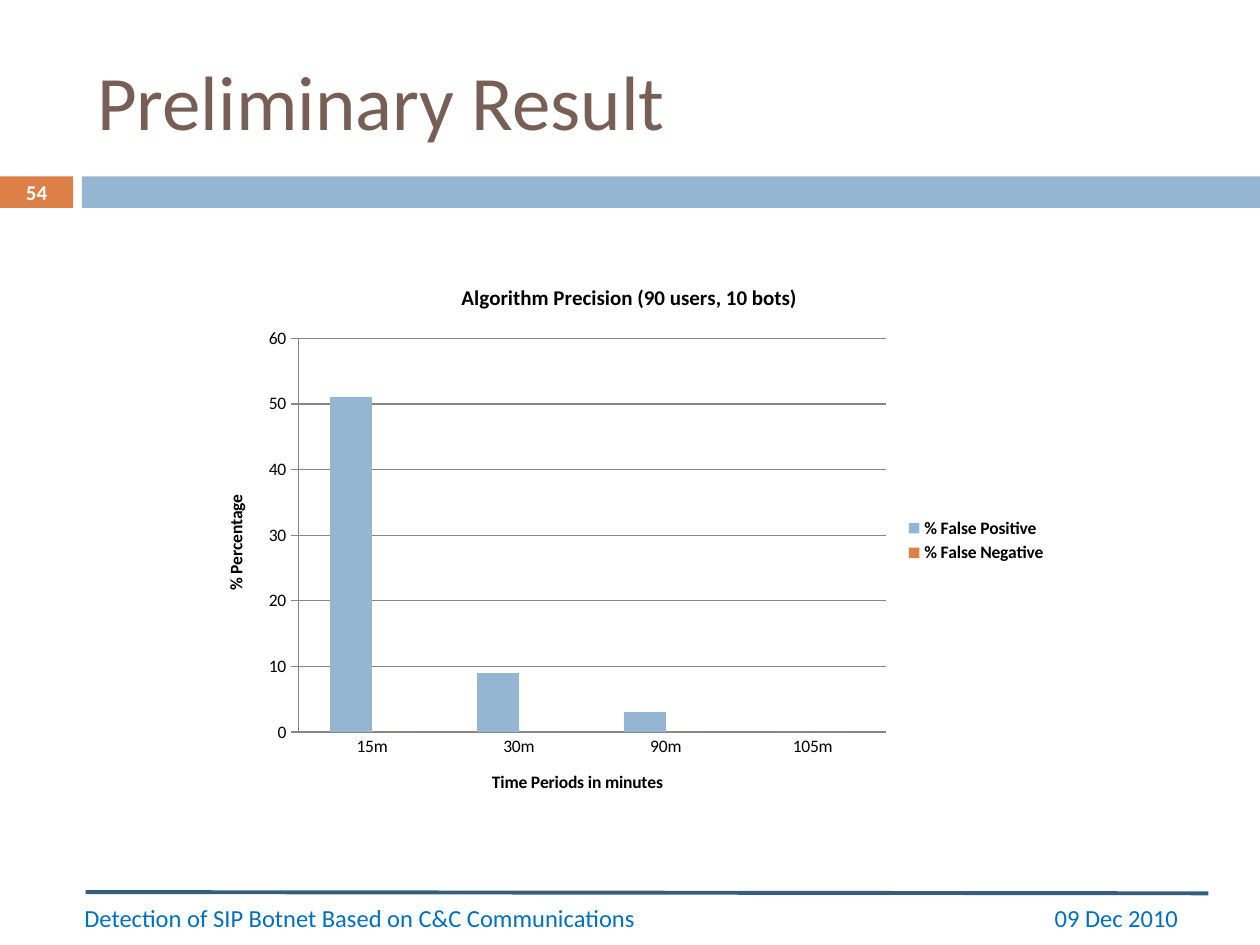
from lxml.etree import SubElement
from pptx import Presentation
from pptx.chart.data import CategoryChartData
from pptx.dml.color import RGBColor
from pptx.enum.chart import XL_CHART_TYPE, XL_LEGEND_POSITION, XL_TICK_MARK
from pptx.enum.shapes import MSO_CONNECTOR, MSO_SHAPE
from pptx.enum.text import MSO_ANCHOR, PP_ALIGN
from pptx.oxml.ns import qn
from pptx.util import Inches, Pt

COLORS = {
    "brown": "775F55", "orange": "DD8047", "blue": "94B6D2", "navy": "355D7E",
    "link": "0070C0", "white": "FFFFFF", "black": "000000", "gray": "878787",
}


def color(name):
    return RGBColor.from_string(COLORS[name])


def style_font(font, size, ink, bold=False):
    font.name, font.size, font.bold = "Calibri", Pt(size), bold
    font.color.rgb = color(ink)


def write(frame, text, size=14, ink="link", bold=False, align=PP_ALIGN.LEFT, left=0.1):
    frame.word_wrap = True
    frame.vertical_anchor = MSO_ANCHOR.MIDDLE
    frame.margin_left, frame.margin_right = Inches(left), Inches(0.1)
    frame.margin_top = frame.margin_bottom = Inches(0.05)
    paragraph = frame.paragraphs[0]
    paragraph.alignment = align
    run = paragraph.add_run()
    run.text = text
    style_font(run.font, size, ink, bold)


class Deck:
    """Holds the presentation style and the current slide."""

    def __init__(self):
        self.presentation = Presentation()
        self.presentation.slide_width = Inches(10)
        self.presentation.slide_height = Inches(7.5)
        self.slide = self.presentation.slides.add_slide(self.presentation.slide_layouts[5])

    def title(self, text, *box):
        heading = self.slide.shapes.title
        heading.left, heading.top, heading.width, heading.height = map(Inches, box)
        write(heading.text_frame, text, size=44, ink="brown")

    def band(self, fill, *box):
        strip = self.slide.shapes.add_shape(MSO_SHAPE.RECTANGLE, *map(Inches, box))
        strip.shadow.inherit = False
        strip.fill.solid()
        strip.fill.fore_color.rgb = color(fill)
        strip.line.fill.background()

    def rule(self, *ends):
        line = self.slide.shapes.add_connector(MSO_CONNECTOR.STRAIGHT, *map(Inches, ends))
        line.line.color.rgb = color("navy")
        line.line.width = Pt(2.25)
        SubElement(line._element.spPr, qn("a:effectLst"))

    def text(self, text, *box, **style):
        write(self.slide.shapes.add_textbox(*map(Inches, box)).text_frame, text, **style)

    def chart_title(self, owner, text, size):
        owner.has_title = True
        title = owner.chart_title if hasattr(owner, "chart_title") else owner.axis_title
        run = title.text_frame.paragraphs[0].add_run()
        run.text = text
        style_font(run.font, size, "black", bold=True)

    def column_chart(self, title, periods, rates, axis_titles, *box):
        data = CategoryChartData()
        data.categories = periods
        for name, (values, _) in rates.items():
            data.add_series(name, values)
        chart = self.slide.shapes.add_chart(
            XL_CHART_TYPE.COLUMN_CLUSTERED, *map(Inches, box), data).chart
        style_font(chart.font, 10, "black")
        self.chart_title(chart, title, 12)
        chart.has_legend = True
        chart.legend.position = XL_LEGEND_POSITION.RIGHT
        chart.legend.include_in_layout = False
        style_font(chart.legend.font, 10, "black", bold=True)
        plot = chart.plots[0]
        plot.gap_width, plot.overlap, plot.vary_by_categories = 150, 0, False
        for series, (_, fill) in zip(plot.series, rates.values()):
            series.format.fill.solid()
            series.format.fill.fore_color.rgb = color(fill)
        percentage = chart.value_axis
        percentage.minimum_scale, percentage.maximum_scale, percentage.major_unit = 0, 60, 10
        percentage.has_major_gridlines = True
        percentage.major_tick_mark = XL_TICK_MARK.CROSS
        chart.category_axis.major_tick_mark = XL_TICK_MARK.NONE
        for axis, axis_title in zip((chart.category_axis, percentage), axis_titles):
            self.chart_title(axis, axis_title, 10)
            axis.format.line.color.rgb = color("gray")
        percentage.major_gridlines.format.line.color.rgb = color("gray")


def main():
    deck = Deck()
    deck.band("orange", 0, 1.4, 0.58, 0.25)
    deck.band("blue", 0.65, 1.4, 9.35, 0.25)
    deck.rule(0.68, 7.08, 9.59, 7.09)
    deck.title("Preliminary Result", 0.67, 0.25, 8.92, 1.08)
    deck.text("09 Dec 2010", 6.67, 7.08, 2.92, 0.4, left=1.7)
    deck.text("Detection of SIP Botnet Based on C&C Communications",
              0.67, 7.08, 5.93, 0.4, left=0)
    deck.text("54", 0, 1.39, 0.58, 0.27, size=12, ink="white", bold=True,
              align=PP_ALIGN.CENTER)
    deck.column_chart(
        "Algorithm Precision (90 users, 10 bots)",
        ["15m", "30m", "90m", "105m"],
        {"% False Positive": ([51, 9, 3, 0], "blue"),
         "% False Negative": ([0, 0, 0, 0], "orange")},
        ("Time Periods in minutes", "% Percentage"),
        1.58, 2.08, 6.83, 4.42)
    deck.presentation.save("out.pptx")


if __name__ == "__main__":
    main()
